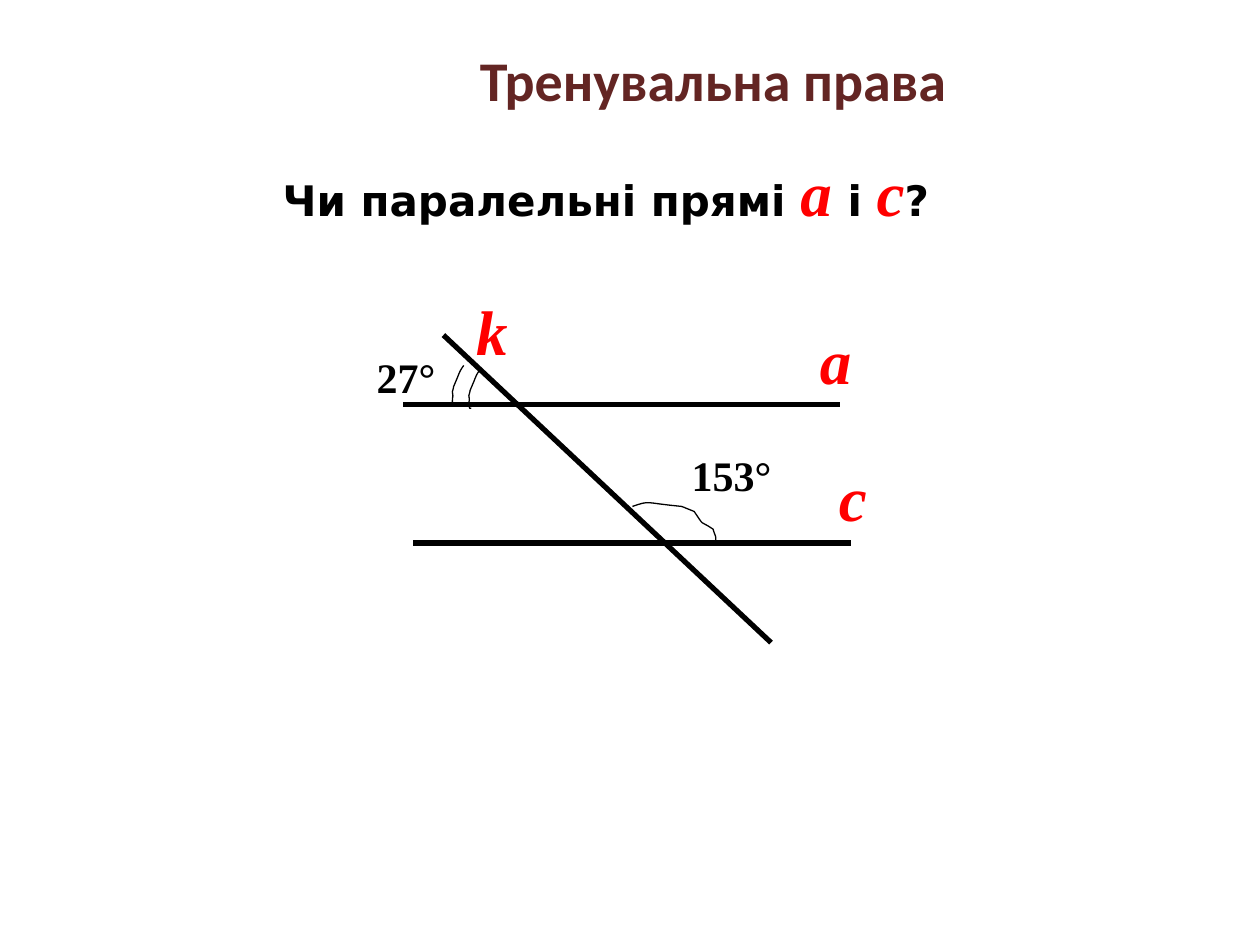
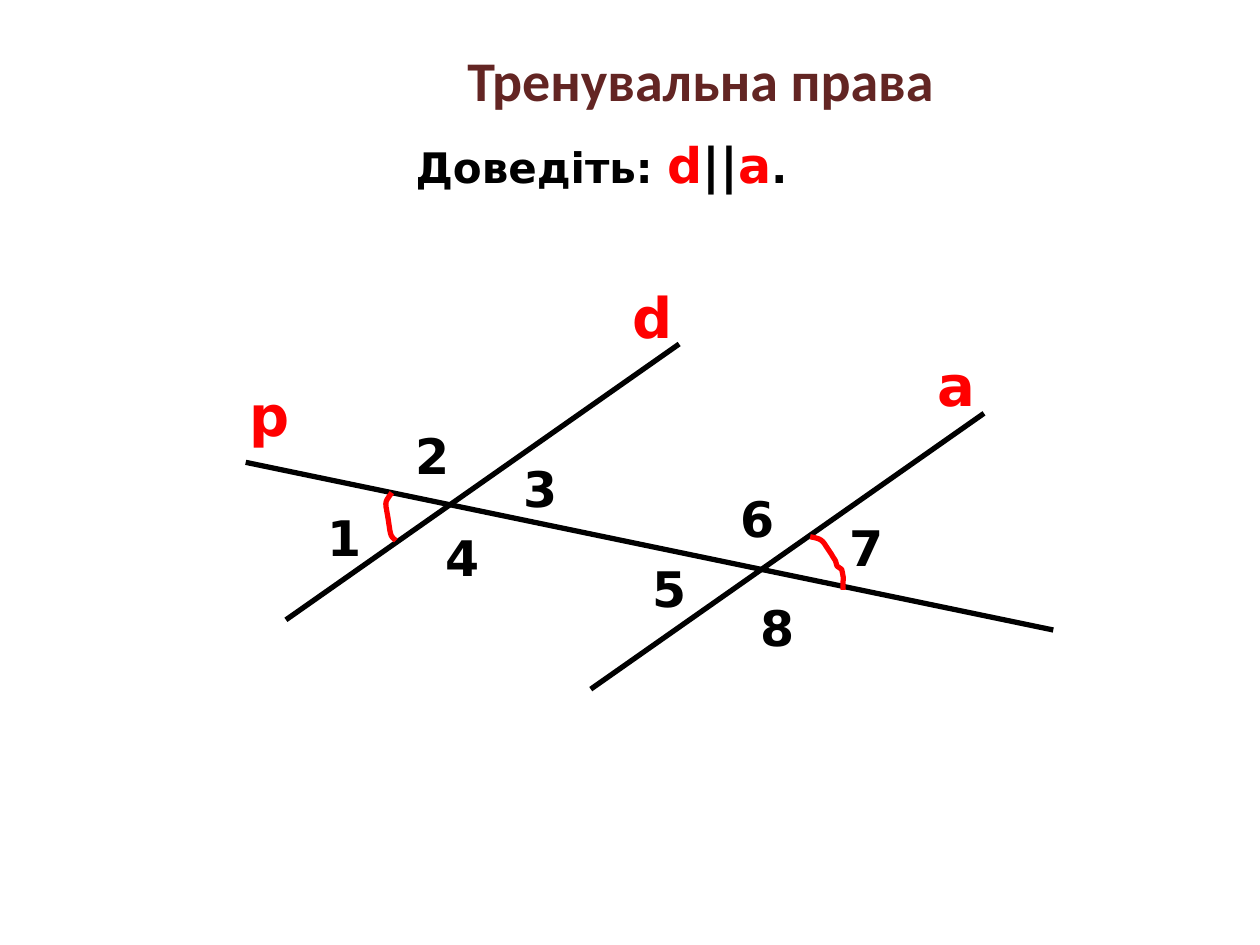
from dataclasses import dataclass

from lxml.etree import SubElement
from pptx import Presentation
from pptx.dml.color import RGBColor as Color
from pptx.enum.shapes import MSO_CONNECTOR as Connector
from pptx.enum.text import MSO_ANCHOR as Anchor, MSO_AUTO_SIZE as AutoSize, PP_ALIGN as Align
from pptx.oxml.ns import qn
from pptx.util import Pt


@dataclass(frozen=True)
class TextStyle:
    """Look of a piece of text and the size of a label box set in it."""
    font: str
    size: int
    color: Color
    italic: bool = False
    width: float = 0
    height: float = 0


class Theme:
    """Colours, strokes and text styles shared by both slides."""
    black = Color.from_string("000000")
    red = Color.from_string("FF0000")
    heavy, thin = 3, 0.75
    sans, serif = "DejaVu Sans", "Times New Roman"
    title = TextStyle("Calibri", 32, Color.from_string("632523"))
    task = TextStyle(sans, 24, black)
    symbol = TextStyle(sans, 28, black)
    red_symbol = TextStyle(sans, 28, red)
    line_letter = TextStyle(serif, 36, red, True, 33.8, 51)
    degrees = TextStyle(serif, 24, black, False, 73.5, 36)
    line_name = TextStyle(sans, 32, red, False, 37.5, 46)
    number = TextStyle(sans, 28, black, False, 34.5, 41)


def style_span(span, style):
    """Apply a text style to a run."""
    font = span.font
    font.name, font.size, font.bold, font.italic = style.font, Pt(style.size), True, style.italic
    font.color.rgb = style.color


def place(shape, left, top, width, height):
    """Set the position and size of a shape in points."""
    shape.left, shape.top, shape.width, shape.height = map(Pt, (left, top, width, height))


def add_page(deck, title_left):
    """Add a slide with the common title."""
    page = deck.slides.add_slide(deck.slide_layouts[5])
    title = page.shapes.title
    place(title, title_left, 22.3, 284, 46)
    frame = title.text_frame
    frame.text = "Тренувальна права"
    frame.word_wrap, frame.auto_size = False, AutoSize.SHAPE_TO_FIT_TEXT
    frame.vertical_anchor = Anchor.TOP
    para = frame.paragraphs[0]
    para.alignment = Align.CENTER
    style_span(para.runs[0], Theme.title)
    return page


def add_text(page, left, top, width, height, pieces, wrap=True):
    """Add a text box made of (text, style) pieces."""
    box = page.shapes.add_textbox(Pt(left), Pt(top), Pt(width), Pt(height))
    frame = box.text_frame
    frame.word_wrap, frame.auto_size = wrap, AutoSize.SHAPE_TO_FIT_TEXT
    for text, style in pieces:
        span = frame.paragraphs[0].add_run()
        span.text = text
        style_span(span, style)


def add_labels(page, style, labels):
    """Add one label per (text, left, top) in a common style."""
    for text, left, top in labels:
        add_text(page, left, top, style.width, style.height, [(text, style)])


def add_line(page, start, end):
    """Draw a heavy straight line between two points."""
    line = page.shapes.add_connector(Connector.STRAIGHT, *map(Pt, (*start, *end)))
    line.line.color.rgb, line.line.width = Theme.black, Pt(Theme.heavy)
    SubElement(line._element.spPr, qn("a:effectLst"))


def bezier(start, first, second, end, steps=8):
    """Return points along a cubic curve, without its start."""
    points = []
    for step in range(1, steps + 1):
        t = step / steps
        weights = (1 - t) ** 3, 3 * t * (1 - t) ** 2, 3 * t * t * (1 - t), t ** 3
        points.append(tuple(sum(w * v for w, v in zip(weights, axis))
                            for axis in zip(start, first, second, end)))
    return points


def shift(points, offset):
    """Move all points by an offset."""
    return [(x + offset[0], y + offset[1]) for x, y in points]


def add_arc(page, knots, color, weight):
    """Draw an angle mark through a chain of cubic curves."""
    points = []
    for index in range(0, len(knots) - 1, 3):
        points += bezier(*knots[index:index + 4])
    builder = page.shapes.build_freeform(*map(Pt, knots[0]))
    builder.add_line_segments([(Pt(x), Pt(y)) for x, y in points], close=False)
    arc = builder.convert_to_shape()
    arc.shadow.inherit = False
    arc.fill.background()
    arc.line.color.rgb, arc.line.width = color, Pt(weight)


def add_parallel_question(deck):
    """Build the slide asking whether two lines are parallel."""
    page = add_page(deck, 265.6)
    for left, top in ((230.4, 231.1), (236.2, 310.3)):
        add_line(page, (left, top), (left + 249.8, top))
    add_line(page, (253.4, 191.5), (440.6, 367.2))
    small_arc = [(265, 208.8), (262.1, 213.1), (263.5, 211), (259.2, 221),
                 (259.2, 221.8), (258.5, 223.9), (258.5, 223.9),
                 (259.2, 228.2), (258.5, 225.4), (258.5, 229.7),
                 (259.2, 231.1), (258.5, 231.1), (259.9, 231.1)]
    large_arc = [(361.4, 289.4), (372.2, 285.8), (367.2, 287.3), (389.5, 289.4),
                 (391.7, 290.2), (396.7, 292.3), (396.7, 292.3),
                 (403.2, 301.7), (398.9, 296.6), (407.5, 302.4),
                 (409, 307.4), (409, 305.3), (409, 308.9)]
    for arc in (small_arc, shift(small_arc, (9.4, 2.2)), large_arc):
        add_arc(page, arc, Theme.black, Theme.thin)
    add_labels(page, Theme.line_letter, [("а", 461.5, 180), ("с", 472.3, 258.5), ("k", 265, 163.4)])
    add_labels(page, Theme.degrees, [("153°", 388.1, 253.4), ("27°", 208.1, 197.3)])
    add_text(page, 154.5, 84.2, 397.7, 51, [
        ("Чи паралельні прямі ", Theme.task), ("а ", Theme.line_letter), ("і ", Theme.task),
        ("с", Theme.line_letter), ("?", Theme.task)], wrap=False)


def add_parallel_proof(deck):
    """Build the slide asking to prove that two lines are parallel."""
    page = add_page(deck, 258.5)
    add_text(page, 230.4, 73.4, 234.7, 41, [
        ("Доведіть: ", Theme.task), ("d", Theme.red_symbol), ("||", Theme.symbol),
        ("a", Theme.red_symbol), (".", Theme.task)], wrap=False)
    line_d = [(163.4, 354.2), (388.1, 196.6)]
    for line in (line_d, shift(line_d, (174.2, 39.6)), [(140.4, 264.2), (601.9, 360)]):
        add_line(page, *line)
    arc_1 = [(223.9, 281.5), (218.9, 288.7), (220.3, 285.1), (222.5, 301),
             (223.2, 306.7), (223.9, 306.7), (226.1, 308.9)]
    arc_7 = [(463, 306.7), (465.8, 307.4), (468.7, 307.4), (470.9, 310.3),
             (472.3, 312.5), (473.8, 314.6), (475.2, 316.8),
             (475.9, 318.2), (476.6, 319), (477.4, 320.4),
             (478.8, 324.7), (477.4, 322.6), (481, 325.4),
             (482.4, 331.9), (481.7, 328.3), (481.7, 337)]
    for arc in (arc_1, arc_7):
        add_arc(page, arc, Theme.red, Theme.heavy)
    add_labels(page, Theme.line_name, [("d", 354.2, 157.7), ("а", 528.5, 196.6), ("р", 135.4, 213.8)])
    corners = [(180, 286.6), (230.4, 239.8), (292.3, 258.5), (247.7, 298.1),
               (365.8, 315.4), (416.2, 275.8), (478.1, 292.3), (427.7, 337.7)]
    add_labels(page, Theme.number,
               [(str(number), *corner) for number, corner in enumerate(corners, 1)])


def main():
    """Build and save the deck."""
    deck = Presentation()
    deck.slide_width, deck.slide_height = Pt(720), Pt(540)
    add_parallel_question(deck)
    add_parallel_proof(deck)
    deck.save("out.pptx")


if __name__ == "__main__":
    main()
